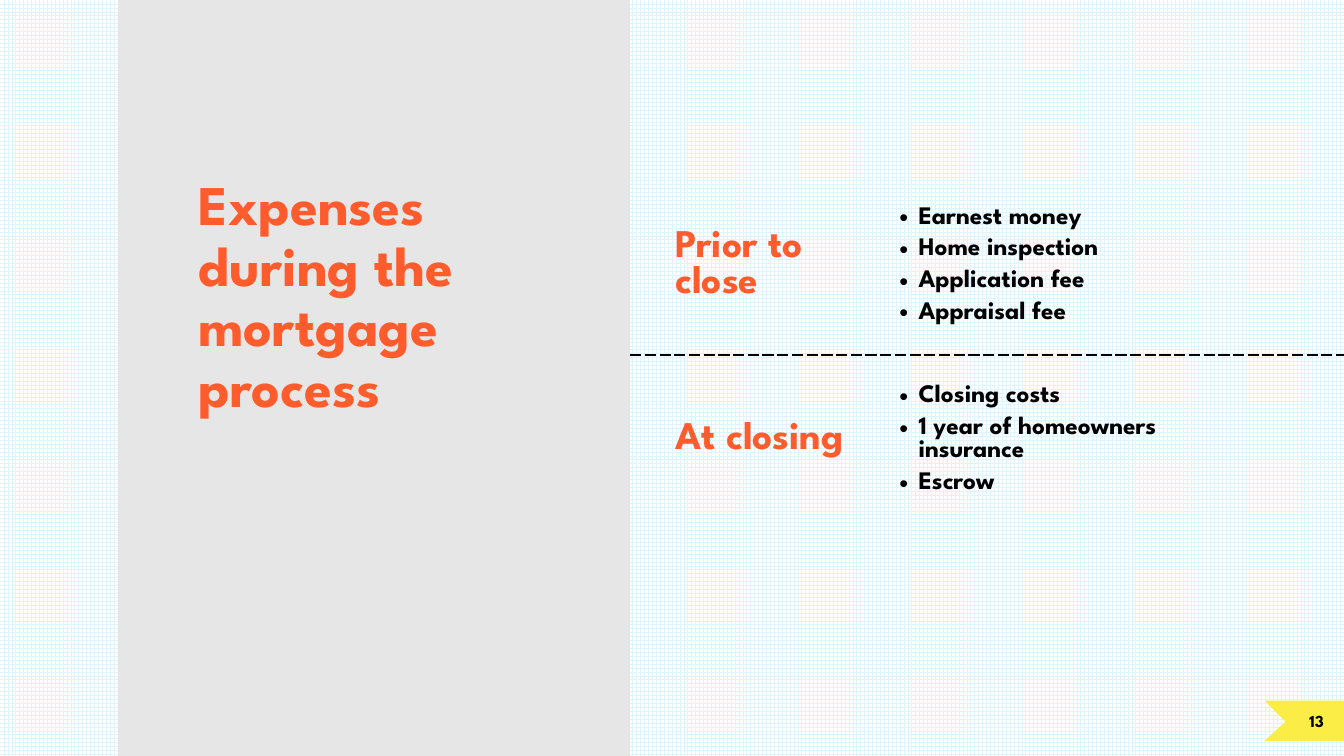
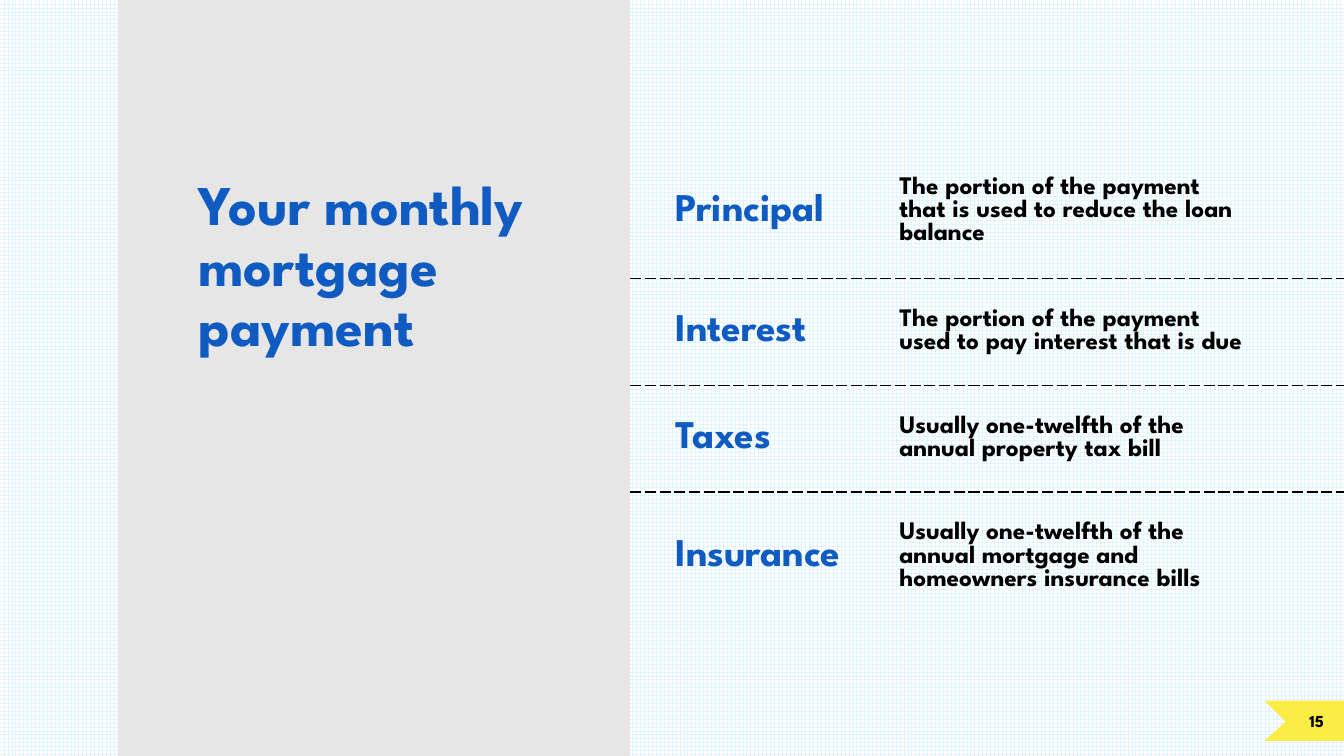
import dataclasses

import lxml.etree
import pptx
import pptx.dml.color
import pptx.enum.dml
import pptx.enum.shapes
import pptx.enum.text
import pptx.oxml.ns
import pptx.presentation
import pptx.shapes.autoshape
import pptx.slide
import pptx.table
import pptx.text.text
import pptx.util

Inches = pptx.util.Inches
Pt = pptx.util.Pt
qn = pptx.oxml.ns.qn


@dataclasses.dataclass(frozen=True)
class Theme:
    font: str = "League Spartan"
    orange: str = "FF5C2E"
    blue: str = "0F5BC1"
    black: str = "000000"
    panel: str = "E7E6E6"
    flag: str = "FBED46"
    grid: str = "E0F4FF"
    paper: str = "FFFFFF"
    title_size: float = 40
    title_leading: float = 43.2
    label_size: float = 28
    body_size: float = 18
    number_size: float = 12
    plain_table_style: str = "{2D5ABB26-0587-4C30-8999-92F81FD0307C}"


@dataclasses.dataclass(frozen=True)
class TopicRow:
    label: str
    lines: tuple[str, ...]
    height: float
    bulleted: bool = False
    top_margin: float = 0.3


@dataclasses.dataclass(frozen=True)
class TopicSlide:
    title: str
    accent: str
    number: str
    rows: tuple[TopicRow, ...]


THEME = Theme()
SLIDE_WIDTH, SLIDE_HEIGHT = 13.33, 7.5
PANEL_LEFT, PANEL_WIDTH = 1.17, 5.08
CONTENT_TOP = 1.75
COLUMN_WIDTHS = (2.67, 4.42)

SLIDES = (
    TopicSlide("Expenses during the mortgage process", THEME.orange, "13", (
        TopicRow("Prior to close",
                 ("Earnest money", "Home inspection", "Application fee", "Appraisal fee"),
                 1.76, bulleted=True),
        TopicRow("At closing",
                 ("Closing costs", "1 year of homeowners insurance", "Escrow"),
                 1.68, bulleted=True),
    )),
    TopicSlide("Your monthly mortgage payment", THEME.blue, "15", (
        TopicRow("Principal",
                 ("The portion of the payment that is used to reduce the loan balance",),
                 1.01, top_margin=0),
        TopicRow("Interest",
                 ("The portion of the payment used to pay interest that is due",), 1.06),
        TopicRow("Taxes", ("Usually one-twelfth of the annual property tax bill",), 1.06),
        TopicRow("Insurance",
                 ("Usually one-twelfth of the annual mortgage and homeowners insurance bills",),
                 1.28),
    )),
)


# Text and shape helpers
def rgb(value: str) -> pptx.dml.color.RGBColor:
    return pptx.dml.color.RGBColor.from_string(value)


def add_text(paragraph: pptx.text.text._Paragraph, text: str, size: float, color: str) -> None:
    run = paragraph.add_run()
    run.text = text
    run.font.name = THEME.font
    run.font.size = Pt(size)
    run.font.bold = True
    run.font.color.rgb = rgb(color)


def set_margins(holder: pptx.text.text.TextFrame | pptx.table._Cell,
                left: float, top: float, right: float, bottom: float) -> None:
    holder.margin_left, holder.margin_top = Inches(left), Inches(top)
    holder.margin_right, holder.margin_bottom = Inches(right), Inches(bottom)


def paint(shape: pptx.shapes.autoshape.Shape, color: str) -> None:
    shape.shadow.inherit = False
    shape.fill.solid()
    shape.fill.fore_color.rgb = rgb(color)
    shape.line.fill.background()


def add_bullet(paragraph: pptx.text.text._Paragraph) -> None:
    properties = paragraph._p.get_or_add_pPr()
    properties.set("marL", str(Inches(0.19)))
    properties.set("indent", str(-Inches(0.19)))
    lxml.etree.SubElement(properties, qn("a:buFont"), typeface="Arial")
    lxml.etree.SubElement(properties, qn("a:buChar"), char="•")
    paragraph.space_after = Pt(6)


def add_dashed_border(cell: pptx.table._Cell, side: str) -> None:
    properties = cell._tc.get_or_add_tcPr()
    border = lxml.etree.SubElement(properties, qn(f"a:ln{side}"), w=str(Pt(1)))
    fill = lxml.etree.SubElement(border, qn("a:solidFill"))
    lxml.etree.SubElement(fill, qn("a:srgbClr"), val=THEME.black)
    lxml.etree.SubElement(border, qn("a:prstDash"), val="sysDash")


# Parts shared by the slides
def set_background(slide: pptx.slide.Slide) -> None:
    fill = slide.background.fill
    fill.patterned()
    fill.pattern = pptx.enum.dml.MSO_PATTERN.LARGE_GRID
    fill.fore_color.rgb = rgb(THEME.grid)
    fill.back_color.rgb = rgb(THEME.paper)


def add_title_panel(slide: pptx.slide.Slide, title: str, accent: str) -> None:
    panel = slide.shapes.add_shape(
        pptx.enum.shapes.MSO_SHAPE.RECTANGLE,
        Inches(PANEL_LEFT), 0, Inches(PANEL_WIDTH), Inches(SLIDE_HEIGHT))
    paint(panel, THEME.panel)
    frame = panel.text_frame
    frame.word_wrap = True
    frame.vertical_anchor = pptx.enum.text.MSO_ANCHOR.TOP
    set_margins(frame, 0.8, CONTENT_TOP, 0.7, 2)
    paragraph = frame.paragraphs[0]
    paragraph.alignment = pptx.enum.text.PP_ALIGN.LEFT
    paragraph.line_spacing = Pt(THEME.title_leading)
    add_text(paragraph, title, THEME.title_size, accent)


def add_number_flag(slide: pptx.slide.Slide, number: str) -> None:
    left, top, bottom = 12.54, 6.95, 7.35
    outline = ((SLIDE_WIDTH, top), (SLIDE_WIDTH, bottom), (left, bottom), (12.75, 7.16))
    builder = slide.shapes.build_freeform(Inches(left), Inches(top))
    builder.add_line_segments([(Inches(x), Inches(y)) for x, y in outline], close=True)
    flag = builder.convert_to_shape()
    paint(flag, THEME.flag)
    frame = flag.text_frame
    frame.word_wrap = True
    frame.vertical_anchor = pptx.enum.text.MSO_ANCHOR.MIDDLE
    set_margins(frame, 0.1, 0.05, 0.2, 0.05)
    paragraph = frame.paragraphs[0]
    paragraph.alignment = pptx.enum.text.PP_ALIGN.RIGHT
    add_text(paragraph, number, THEME.number_size, THEME.black)


# Topic table
def fill_row(label_cell: pptx.table._Cell, body_cell: pptx.table._Cell,
             row: TopicRow, accent: str) -> None:
    set_margins(label_cell, 0.45, row.top_margin, 0.15, 0.3)
    label_cell.vertical_anchor = pptx.enum.text.MSO_ANCHOR.MIDDLE
    add_text(label_cell.text_frame.paragraphs[0], row.label, THEME.label_size, accent)

    set_margins(body_cell, 0, row.top_margin, 1, 0.3)
    frame = body_cell.text_frame
    for index, line in enumerate(row.lines):
        paragraph = frame.add_paragraph() if index else frame.paragraphs[0]
        if row.bulleted:
            add_bullet(paragraph)
        add_text(paragraph, line, THEME.body_size, THEME.black)


def add_topic_table(slide: pptx.slide.Slide, rows: tuple[TopicRow, ...], accent: str) -> None:
    table = slide.shapes.add_table(
        len(rows), len(COLUMN_WIDTHS),
        Inches(PANEL_LEFT + PANEL_WIDTH), Inches(CONTENT_TOP),
        Inches(sum(COLUMN_WIDTHS)), Inches(sum(row.height for row in rows))).table
    table.first_row = table.horz_banding = False
    table._tbl.tblPr.find(qn("a:tableStyleId")).text = THEME.plain_table_style
    for column, width in zip(table.columns, COLUMN_WIDTHS):
        column.width = Inches(width)
    for index, row in enumerate(rows):
        table.rows[index].height = Inches(row.height)
        cells = tuple(table.rows[index].cells)
        fill_row(*cells, row, accent)
        for cell in cells:
            # Dashed rules run only between rows
            if index > 0:
                add_dashed_border(cell, "T")
            if index < len(rows) - 1:
                add_dashed_border(cell, "B")
            cell.fill.background()


def add_topic_slide(presentation: pptx.presentation.Presentation, topic: TopicSlide) -> None:
    slide = presentation.slides.add_slide(presentation.slide_layouts[6])
    set_background(slide)
    add_title_panel(slide, topic.title, topic.accent)
    add_topic_table(slide, topic.rows, topic.accent)
    add_number_flag(slide, topic.number)


def main() -> None:
    presentation = pptx.Presentation()
    presentation.slide_width = Inches(SLIDE_WIDTH)
    presentation.slide_height = Inches(SLIDE_HEIGHT)
    for topic in SLIDES:
        add_topic_slide(presentation, topic)
    presentation.save("out.pptx")


if __name__ == "__main__":
    main()
